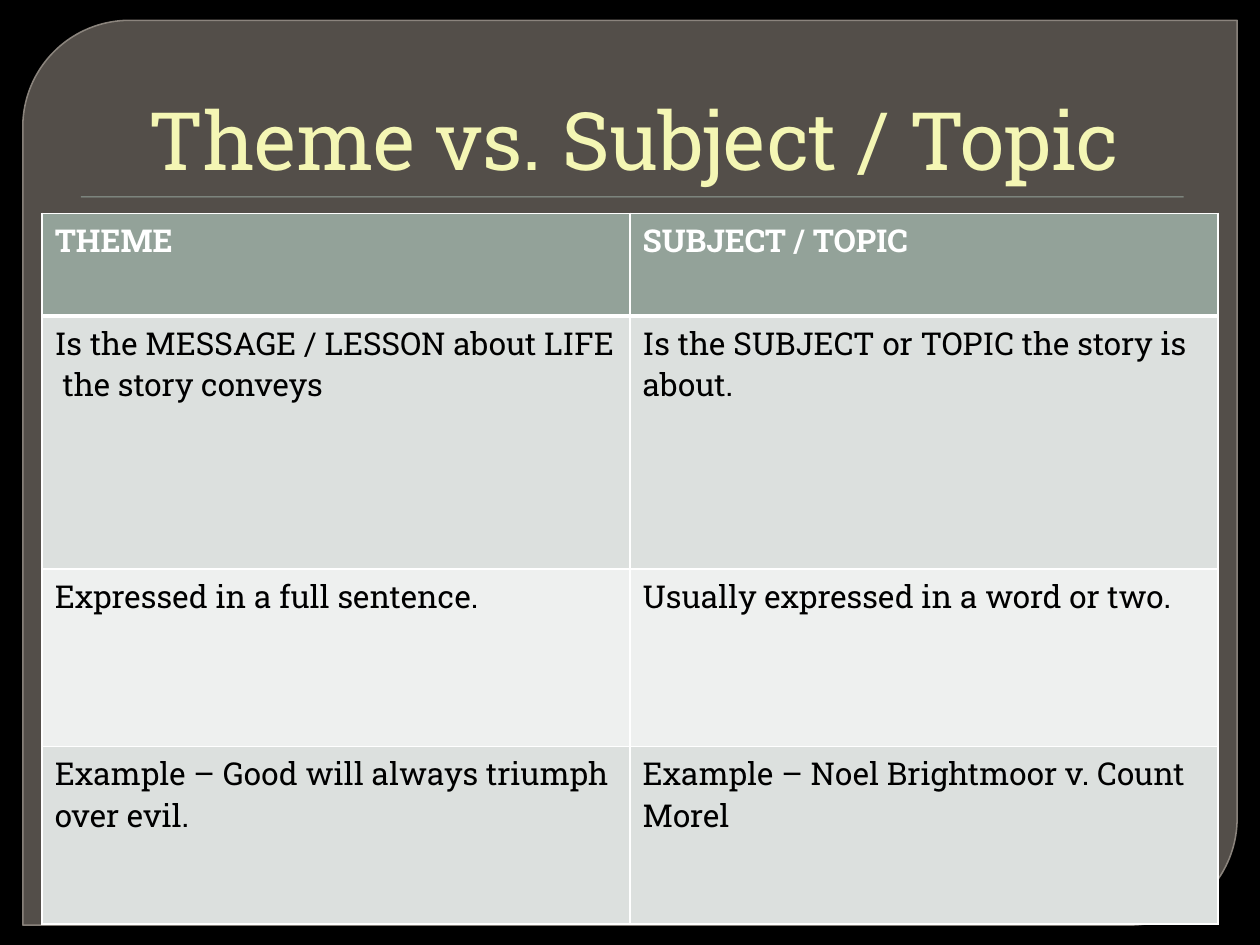
from lxml.etree import SubElement
from pptx import Presentation
from pptx.dml.color import RGBColor
from pptx.enum.shapes import MSO_SHAPE
from pptx.enum.text import MSO_ANCHOR, PP_ALIGN
from pptx.oxml.ns import qn
from pptx.util import Cm, Pt

# Content
TITLE = "Theme vs. Subject / Topic"
ROWS = [
    ("THEME", "SUBJECT / TOPIC"),
    ("Is the MESSAGE / LESSON about LIFE  the story conveys",
     "Is the SUBJECT or TOPIC the story is about."),
    ("Expressed in a full sentence.", "Usually expressed in a word or two."),
    ("Example – Good will always triumph over evil.",
     "Example – Noel Brightmoor v. Count Morel"),
]
ROW_HEIGHTS = [2.07, 5.1, 3.58, 3.58]  # cm
COLUMN_WIDTH = 11.85  # cm

THEME = {
    "font": "Roboto Slab",
    "title_size": 46,
    "table_size": 18,
    "background": "000000",
    "panel": "817971",
    "panel_line": "979088",
    "accent": "93A299",
    "shadow": "000000",
    "title": "F4F6B4",
    "header_text": "FFFFFF",
    "body_text": "000000",
    "border": "FFFFFF",
    "bands": ("DCE0DE", "EEF0EF"),
}


def color(name):
    return RGBColor.from_string(name)


def paint(fill, name):
    fill.solid()
    fill.fore_color.rgb = color(name)


def set_opacity(shape, tag, percent):
    """Make the solid fill under the given property element translucent."""
    parent = shape._element.spPr
    if tag:
        parent = parent.find(qn(tag))
    rgb = parent.find(qn("a:solidFill")).find(qn("a:srgbClr"))
    SubElement(rgb, qn("a:alpha"), val=str(percent * 1000))


def add_text(paragraph, text, size, name, bold=False):
    run = paragraph.add_run()
    run.text = text
    run.font.name = THEME["font"]
    run.font.size = Pt(size)
    run.font.bold = bold
    run.font.color.rgb = color(name)


def set_borders(cell, widths):
    properties = cell._tc.get_or_add_tcPr()
    for side, width in widths.items():
        line = SubElement(properties, qn(f"a:ln{side}"), w=str(Pt(width)))
        fill = SubElement(line, qn("a:solidFill"))
        SubElement(fill, qn("a:srgbClr"), val=THEME["border"])


def add_panel(slide):
    panel = slide.shapes.add_shape(
        MSO_SHAPE.ROUND_2_DIAG_RECTANGLE, Cm(0.46), Cm(0.41), Cm(24.48), Cm(18.24))
    panel.adjustments[0] = 0.118
    panel.adjustments[1] = 0
    panel.shadow.inherit = False
    paint(panel.fill, THEME["panel"])
    set_opacity(panel, None, 65)
    paint(panel.line.fill, THEME["panel_line"])
    panel.line.width = Pt(0.87)
    set_opacity(panel, "a:ln", 88)


def add_rule(slide):
    rule = slide.shapes.add_shape(
        MSO_SHAPE.RECTANGLE, Cm(1.63), Cm(3.96), Cm(22.23), Cm(0.02))
    paint(rule.fill, THEME["accent"])
    rule.line.fill.background()
    rule.shadow.inherit = False
    effects = rule._element.spPr.find(qn("a:effectLst"))
    shadow = SubElement(effects, qn("a:outerShdw"), blurRad=str(Pt(1)),
                        dist=str(Pt(1)), dir=str(90 * 60000))
    shade = SubElement(shadow, qn("a:srgbClr"), val=THEME["shadow"])
    SubElement(shade, qn("a:alpha"), val="75000")


def add_title(slide):
    box = slide.shapes.add_textbox(Cm(1.27), Cm(0.71), Cm(22.86), Cm(3.18))
    frame = box.text_frame
    frame.word_wrap = True
    frame.vertical_anchor = MSO_ANCHOR.BOTTOM
    paragraph = frame.paragraphs[0]
    paragraph.alignment = PP_ALIGN.CENTER
    paragraph._p.get_or_add_pPr().set("marL", str(Cm(0.15)))
    add_text(paragraph, TITLE, THEME["title_size"], THEME["title"])


def add_comparison(slide):
    column_count = len(ROWS[0])
    table = slide.shapes.add_table(
        len(ROWS), column_count, Cm(0.85), Cm(4.3),
        Cm(COLUMN_WIDTH * column_count), Cm(sum(ROW_HEIGHTS))).table
    for column in table.columns:
        column.width = Cm(COLUMN_WIDTH)
    for row_index, texts in enumerate(ROWS):
        table.rows[row_index].height = Cm(ROW_HEIGHTS[row_index])
        header = row_index == 0
        fill = THEME["accent"] if header else THEME["bands"][(row_index - 1) % 2]
        text_color = THEME["header_text"] if header else THEME["body_text"]
        top = 3 if row_index == 1 else 1
        bottom = 3 if header else 1
        for column_index, text in enumerate(texts):
            cell = table.cell(row_index, column_index)
            set_borders(cell, {"L": 1, "R": 1, "T": top, "B": bottom})
            paint(cell.fill, fill)
            add_text(cell.text_frame.paragraphs[0], text,
                     THEME["table_size"], text_color, bold=header)


def main():
    presentation = Presentation()
    presentation.slide_width = Cm(25.4)
    presentation.slide_height = Cm(19.05)
    slide = presentation.slides.add_slide(presentation.slide_layouts[6])
    paint(slide.background.fill, THEME["background"])

    # Backdrop
    add_panel(slide)
    add_rule(slide)

    # Title and comparison table
    add_title(slide)
    add_comparison(slide)

    presentation.save("out.pptx")


if __name__ == "__main__":
    main()
